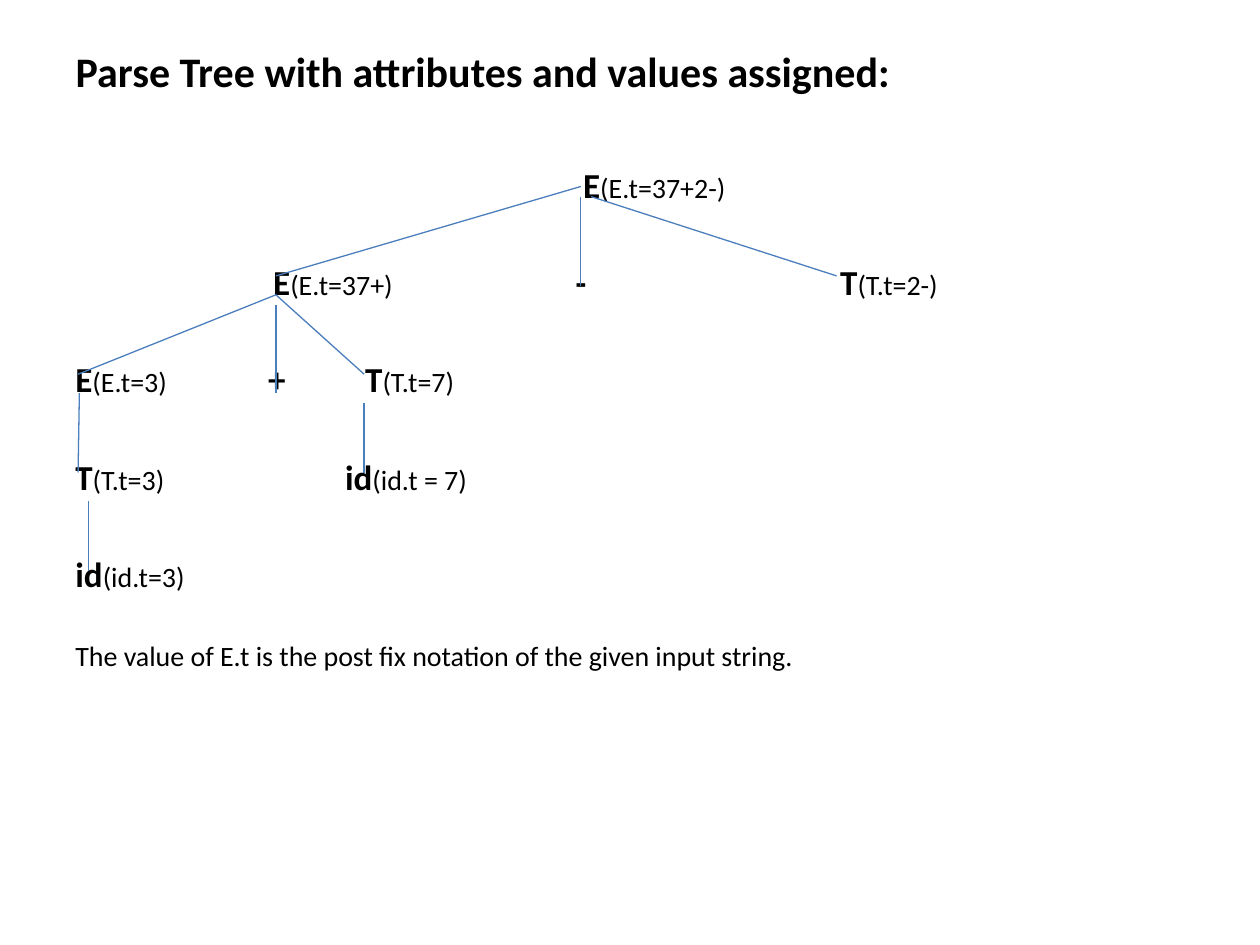
from lxml import etree
from pptx import Presentation
from pptx.dml.color import RGBColor
from pptx.enum.shapes import MSO_CONNECTOR as Connector
from pptx.enum.text import MSO_ANCHOR as Anchor, PP_ALIGN as Align
from pptx.oxml.ns import qn
from pptx.util import Inches, Pt

COLORS = {"text": "000000", "branch": "4B7EBC"}
FONT = "Calibri"
TITLE = "Parse Tree with attributes and values assigned:"
NOTE = "The value of E.t is the post fix notation of the given input string."

LEVELS = [
    [(4.63, "E", "(E.t=37+2-)")],
    [(2.17, "E", "(E.t=37+)"), (4.57, "-", ""), (6.67, "T", "(T.t=2-)")],
    [(0.6, "E", "(E.t=3)"), (2.13, "+", ""), (2.9, "T", "(T.t=7)")],
    [(0.6, "T", "(T.t=3)"), (2.74, "id", "(id.t = 7)")],
    [(0.6, "id", "(id.t=3)")],
]
BRANCHES = [
    (4.61, 1.48, 2.19, 2.19),
    (4.61, 1.56, 4.61, 2.27),
    (4.69, 1.56, 6.64, 2.19),
    (2.19, 2.34, 0.62, 2.97),
    (2.19, 2.34, 2.89, 2.97),
    (2.19, 2.42, 2.19, 3.12),
    (0.63, 3.12, 0.62, 3.75),
    (2.89, 3.2, 2.89, 3.75),
    (0.7, 3.98, 0.7, 4.53),
]
LEFT, WIDTH, MARGIN = 0.5, 9, 0.1
TEXT_LEFT = LEFT + MARGIN
LEVEL_GAP, NOTE_GAP = 31.5, 25.5


def style(span, size, bold=False):
    span.font.name = FONT
    span.font.size = Pt(size)
    span.font.bold = bold
    span.font.color.rgb = RGBColor.from_string(COLORS["text"])


def add_span(para, text, size, bold=False):
    span = para.add_run()
    span.text = text
    style(span, size, bold)


def add_tab_stops(para, positions):
    tab_list = etree.SubElement(para._p.get_or_add_pPr(), qn("a:tabLst"))
    for position in positions:
        etree.SubElement(tab_list, qn("a:tab"), pos=str(Inches(position)), algn="l")


def add_title(page):
    title = page.shapes.title
    title.left, title.top = Inches(LEFT), Inches(0.31)
    title.width, title.height = Inches(WIDTH), Inches(0.6)
    title.text_frame.text = TITLE
    title.text_frame.vertical_anchor = Anchor.TOP
    para = title.text_frame.paragraphs[0]
    para.alignment = Align.LEFT
    style(para.runs[0], 24, True)


def add_tree_text(page):
    box = page.shapes.add_textbox(Inches(LEFT), Inches(1.25), Inches(WIDTH), Inches(6.01))
    frame = box.text_frame
    frame.word_wrap = True
    for index, nodes in enumerate(LEVELS):
        para = frame.add_paragraph() if index else frame.paragraphs[0]
        para.space_before = Pt(LEVEL_GAP if index else 0)
        add_tab_stops(para, [left - TEXT_LEFT for left, _, _ in nodes if left > TEXT_LEFT])
        for left, symbol, value in nodes:
            add_span(para, "\t" + symbol if left > TEXT_LEFT else symbol, 20, True)
            if value:
                add_span(para, value, 16)
    note = frame.add_paragraph()
    note.space_before = Pt(NOTE_GAP)
    add_span(note, NOTE, 16)


def add_branch(page, ends):
    line = page.shapes.add_connector(Connector.STRAIGHT, *map(Inches, ends))
    line.line.color.rgb = RGBColor.from_string(COLORS["branch"])
    line.line.width = Pt(0.75)
    etree.SubElement(line._element.spPr, qn("a:effectLst"))


def main():
    deck = Presentation()
    deck.slide_width, deck.slide_height = Inches(10), Inches(7.5)
    page = deck.slides.add_slide(deck.slide_layouts[5])
    add_title(page)
    add_tree_text(page)
    for ends in BRANCHES:
        add_branch(page, ends)
    deck.save("out.pptx")


if __name__ == "__main__":
    main()
